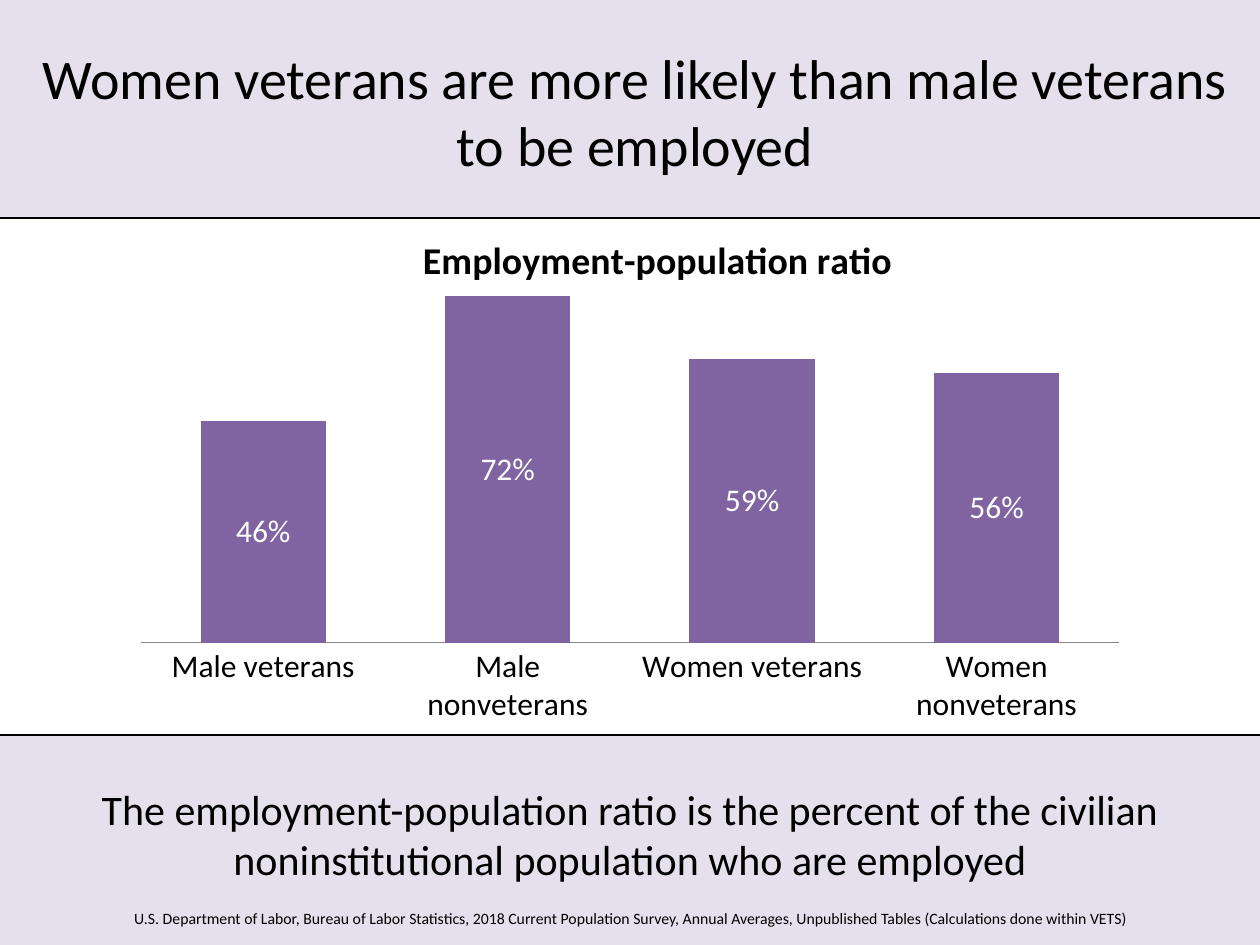
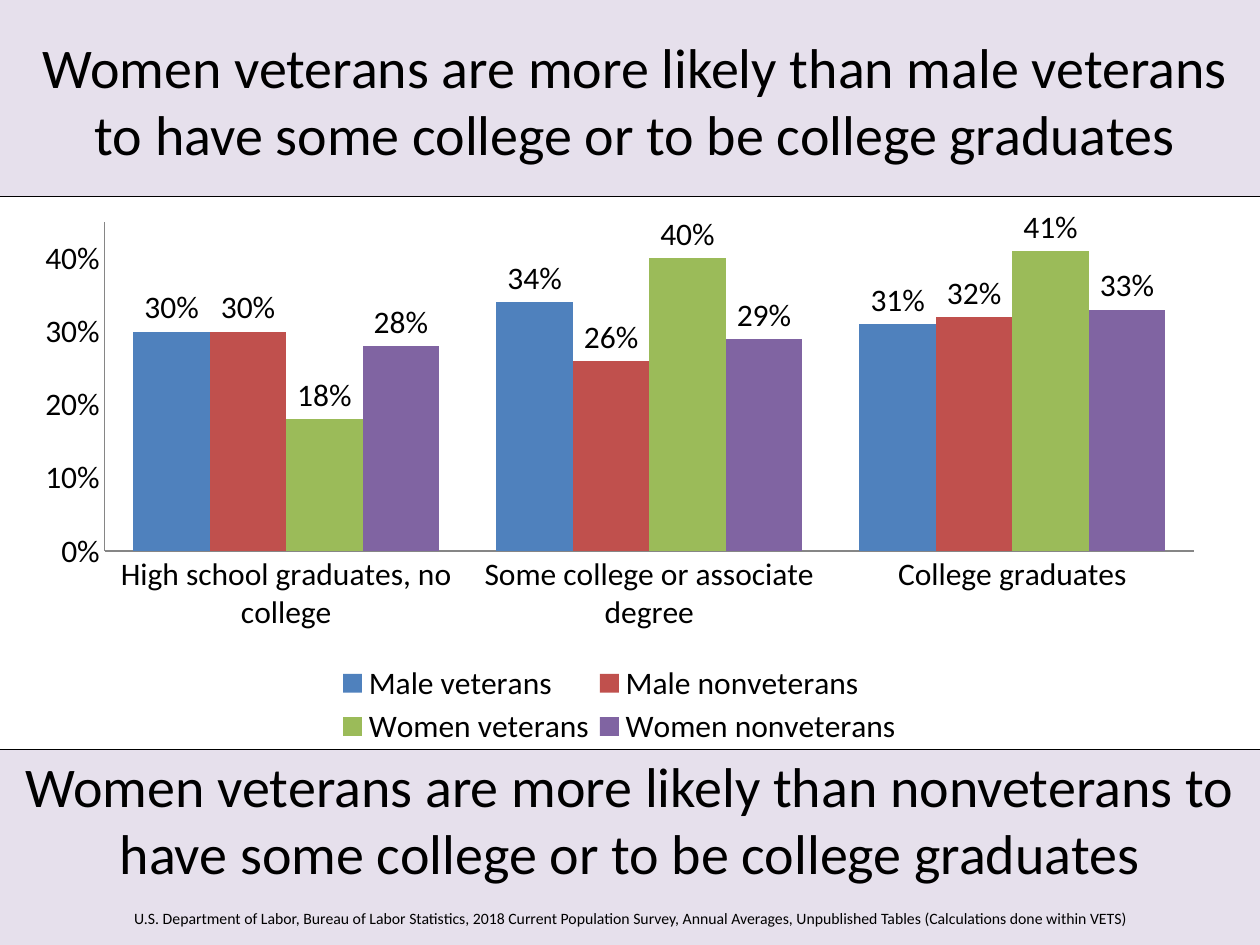
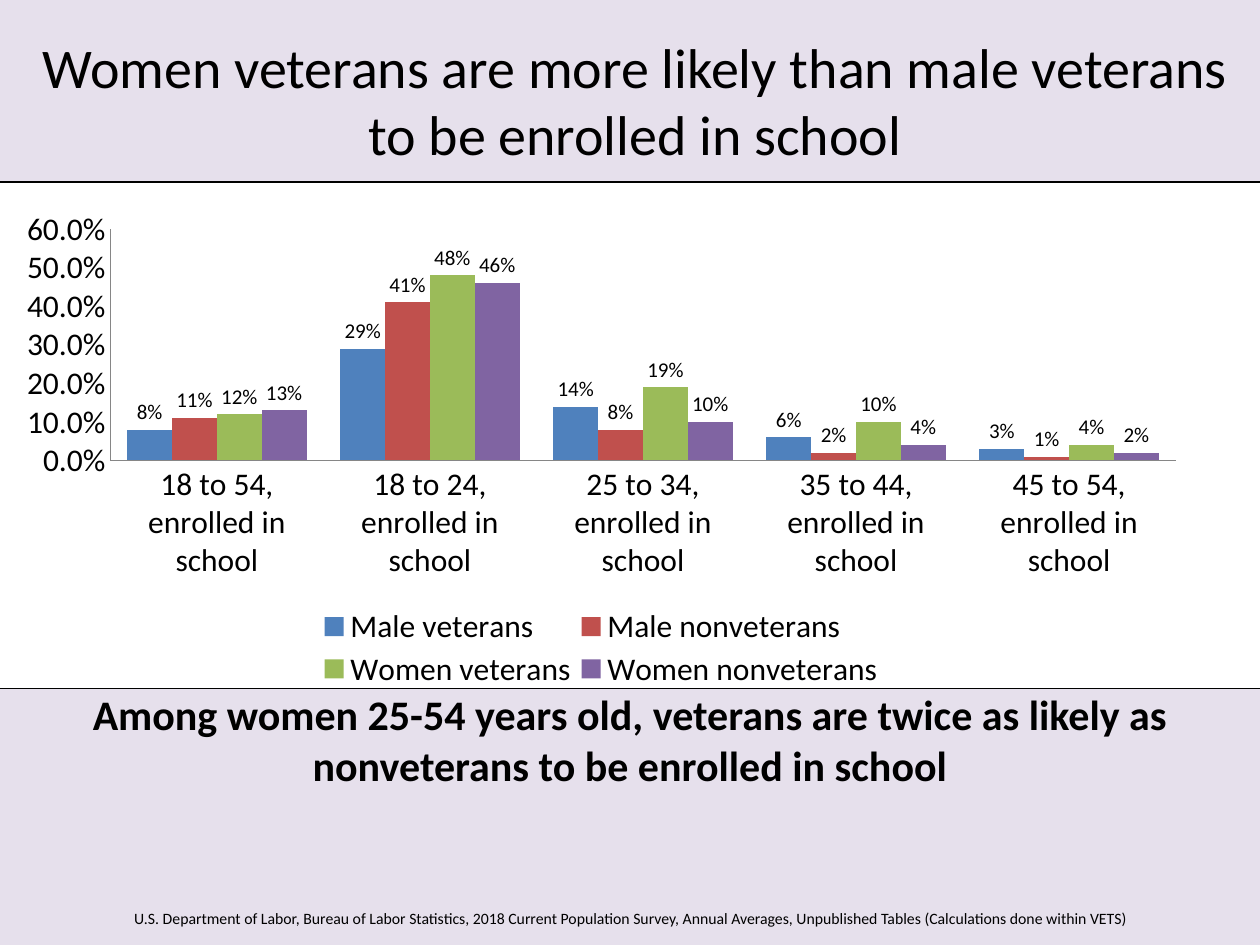
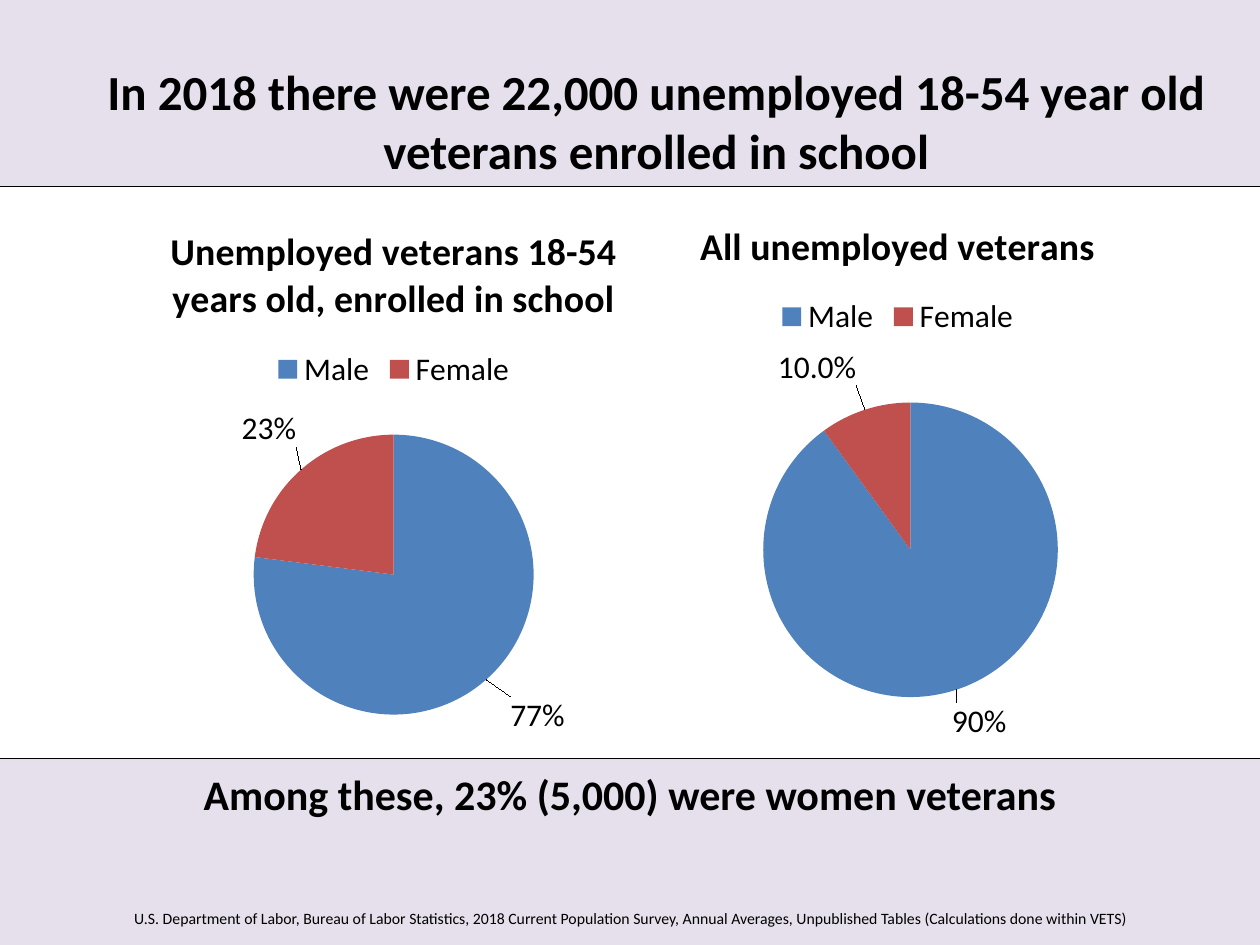
from lxml import etree
from pptx import Presentation
from pptx.chart.data import CategoryChartData as ChartData
from pptx.dml.color import RGBColor
from pptx.enum.chart import XL_CHART_TYPE as ChartType
from pptx.enum.chart import XL_LABEL_POSITION as LabelPos
from pptx.enum.chart import XL_LEGEND_POSITION as LegendPos
from pptx.enum.chart import XL_TICK_MARK as Tick
from pptx.enum.shapes import MSO_CONNECTOR as Connector
from pptx.enum.shapes import MSO_SHAPE as Shape
from pptx.enum.text import MSO_ANCHOR as Anchor
from pptx.enum.text import PP_ALIGN as Align
from pptx.oxml import parse_xml
from pptx.oxml.ns import nsdecls, qn
from pptx.util import Pt

BLACK = RGBColor(0x00, 0x00, 0x00)
WHITE = RGBColor(0xFF, 0xFF, 0xFF)
LAVENDER = RGBColor(0xE6, 0xE0, 0xEC)
AXIS_GRAY = RGBColor(0x86, 0x86, 0x86)
BLUE = RGBColor(0x4F, 0x81, 0xBD)
RED = RGBColor(0xC0, 0x50, 0x4D)
GREEN = RGBColor(0x9B, 0xBB, 0x59)
PURPLE = RGBColor(0x80, 0x64, 0xA2)
GROUP_COLORS = [BLUE, RED, GREEN, PURPLE]

FONT = "Calibri"
WIDTH, HEIGHT = 720, 540
CHART_SIZE, CHART_TITLE_SIZE = 18, 21.6
GROUPS = ["Male veterans", "Male nonveterans", "Women veterans", "Women nonveterans"]
SOURCE = ("U.S. Department of Labor, Bureau of Labor Statistics, 2018 Current Population Survey, "
          "Annual Averages, Unpublished Tables (Calculations done within VETS)")

SLIDES = [
    dict(
        title="Women veterans are more likely than male veterans to be employed",
        title_box=(6, 18), title_format=dict(size=Pt(32)),
        message="The employment-population ratio is the percent of the civilian "
                "noninstitutional population who are employed",
        message_top=444, message_format=dict(size=Pt(24)),
        bands=(124.5, 420),
        charts=[dict(
            kind=ChartType.COLUMN_STACKED, box=(69, 90, 582, 330),
            title="Employment-population ratio", title_at=(0.29, 0.12),
            categories=GROUPS,
            series={"Employment-population ratio": [0.46, 0.72, 0.59, 0.56]},
            colors=[PURPLE], gap=95, overlap=100, top=0.72, axis_format=None,
            label_position=LabelPos.CENTER,
            label_format=dict(size=Pt(18), color=WHITE),
            plot=(0.02, 0.24, 0.96, 0.6), legend=None)],
    ),
    dict(
        title="Women veterans are more likely than male veterans "
              "to have some college or to be college graduates",
        title_box=(6, 12), title_format=dict(size=Pt(32)),
        message="Women veterans are more likely than nonveterans to have some college "
                "or to be college graduates",
        message_top=426, message_format=dict(size=Pt(32)),
        bands=(112.5, 428.5),
        charts=[dict(
            kind=ChartType.COLUMN_CLUSTERED, box=(12, 119, 684, 310),
            categories=["High school graduates, no college",
                        "Some college or associate degree", "College graduates"],
            series=dict(zip(GROUPS, [[0.3, 0.34, 0.31], [0.3, 0.26, 0.32],
                                     [0.18, 0.4, 0.41], [0.28, 0.29, 0.33]])),
            colors=GROUP_COLORS, gap=75, overlap=0, top=0.45, axis_format="0%",
            label_position=LabelPos.OUTSIDE_END,
            label_format=dict(size=Pt(18), color=BLACK),
            plot=(0.07, 0.02, 0.91, 0.61), legend=(0.26, 0.83, 0.48, 0.17))],
    ),
    dict(
        title="Women veterans are more likely than male veterans to be enrolled in school",
        title_box=(6, 12), title_format=dict(size=Pt(32)),
        message="Among women 25-54 years old, veterans are twice as likely as "
                "nonveterans to be enrolled in school",
        message_top=390, message_format=dict(size=Pt(24), bold=True),
        bands=(104, 393.5),
        charts=[dict(
            kind=ChartType.COLUMN_CLUSTERED, box=(1.5, 114, 684, 281.5),
            categories=[f"{ages}, enrolled in school" for ages in
                        ("18 to 54", "18 to 24", "25 to 34", "35 to 44", "45 to 54")],
            series=dict(zip(GROUPS, [[0.08, 0.29, 0.14, 0.06, 0.03],
                                     [0.11, 0.41, 0.08, 0.02, 0.01],
                                     [0.12, 0.48, 0.19, 0.1, 0.04],
                                     [0.13, 0.46, 0.1, 0.04, 0.02]])),
            colors=GROUP_COLORS, gap=75, overlap=0, top=0.6, axis_format="0.0%",
            label_position=LabelPos.OUTSIDE_END,
            label_format=dict(size=Pt(12), color=BLACK),
            plot=(0.09, 0.06, 0.89, 0.47), legend=(0.26, 0.82, 0.48, 0.18))],
    ),
    dict(
        title="In 2018 there were 22,000 unemployed 18-54 year old veterans enrolled in school",
        title_box=(18, 24), title_format=dict(size=Pt(28), bold=True),
        message="Among these, 23% (5,000) were women veterans",
        message_top=435.5, message_format=dict(size=Pt(24), bold=True),
        bands=(106.5, 433.5),
        charts=[
            dict(kind=ChartType.PIE, box=(42, 114, 366, 320),
                 title="Unemployed veterans 18-54 years old, enrolled in school",
                 categories=["Male", "Female"],
                 series={"Unemployed veterans 18-54 years old, enrolled in school": [77, 23]},
                 colors=[BLUE, RED], plot=(0.28, 0.42, 0.44, 0.5),
                 labels=[("0%", 0.03, 0.02), ("0%", 0, -0.03)]),
            dict(kind=ChartType.PIE, box=(330, 111, 366, 320),
                 title="All unemployed veterans",
                 categories=["Male", "Female"],
                 series={"All unemployed veterans": [90, 10]},
                 colors=[BLUE, RED], plot=(0.29, 0.37, 0.46, 0.53),
                 labels=[("0%", -0.01, 0.01), ("0.0%", -0.01, -0.03)]),
        ],
    ),
]


def apply_font(font, formats):
    for name, value in dict(name=FONT, color=BLACK, **{}).items() | formats.items():
        if name != "color":
            setattr(font, name, value)
    font.color.rgb = formats.get("color", BLACK)


def add_text(slide, text, box, formats, anchor=Anchor.TOP):
    frame = slide.shapes.add_textbox(*map(Pt, box)).text_frame
    frame.word_wrap = True
    frame.vertical_anchor = anchor
    paragraph = frame.paragraphs[0]
    paragraph.alignment = Align.CENTER
    run = paragraph.add_run()
    run.text = text
    apply_font(run.font, formats)


def add_band(slide, top, height):
    band = slide.shapes.add_shape(Shape.RECTANGLE, 0, Pt(top), Pt(WIDTH), Pt(height))
    band.shadow.inherit = False
    band.fill.solid()
    band.fill.fore_color.rgb = LAVENDER
    band.line.fill.background()


def add_rule(slide, y):
    rule = slide.shapes.add_connector(Connector.STRAIGHT, 0, Pt(y), Pt(WIDTH), Pt(y))
    rule.line.color.rgb = BLACK
    rule.line.width = Pt(0.75)
    etree.SubElement(rule._element.spPr, qn("a:effectLst"))


def place(part, after, place_at, inner=False):
    for old in part.findall(qn("c:layout")):
        part.remove(old)
    target = '<c:layoutTarget val="inner"/>' if inner else ""
    modes = '<c:xMode val="edge"/><c:yMode val="edge"/>'
    sizes = "".join(f'<c:{key} val="{value}"/>' for key, value in zip("xywh", place_at))
    layout = parse_xml(f'<c:layout {nsdecls("c")}><c:manualLayout>{target}{modes}{sizes}'
                       "</c:manualLayout></c:layout>")
    part.insert(part.index(part.find(qn(after))) + 1 if after else 0, layout)


def style_columns(chart, content):
    plot = chart.plots[0]
    plot.gap_width, plot.overlap = content["gap"], content["overlap"]
    values, groups = chart.value_axis, chart.category_axis
    values.minimum_scale, values.maximum_scale = 0, content["top"]
    values.major_unit = 0.1
    values.has_major_gridlines = False
    for axis in (values, groups):
        axis.major_tick_mark = Tick.NONE
        axis.format.line.color.rgb = AXIS_GRAY
    if content["axis_format"]:
        values.tick_labels.number_format = content["axis_format"]
        values.tick_labels.number_format_is_linked = False
    else:
        values.visible = False
    for series, color in zip(plot.series, content["colors"]):
        series.invert_if_negative = False
        series.format.fill.solid()
        series.format.fill.fore_color.rgb = color
        labels = series.data_labels
        for name, value in dict(show_value=True, number_format="0%",
                                number_format_is_linked=False,
                                position=content["label_position"]).items():
            setattr(labels, name, value)
        apply_font(labels.font, content["label_format"])


def style_pie(chart, content):
    series = chart.plots[0].series[0]
    labels = series.data_labels
    for name, value in dict(show_percentage=True, show_value=False, number_format="0%",
                            number_format_is_linked=False,
                            position=LabelPos.OUTSIDE_END).items():
        setattr(labels, name, value)
    flags = "".join(f'<c:show{flag} val="{int(flag == "Percent")}"/>' for flag in
                    ("LegendKey", "Val", "CatName", "SerName", "Percent", "BubbleSize"))
    for index, (color, (number_format, dx, dy)) in enumerate(
            zip(content["colors"], content["labels"])):
        fill = series.points[index].format.fill
        fill.solid()
        fill.fore_color.rgb = color
        labels._element.insert(index, parse_xml(
            f'<c:dLbl {nsdecls("c")}><c:idx val="{index}"/><c:layout><c:manualLayout>'
            f'<c:x val="{dx}"/><c:y val="{dy}"/></c:manualLayout></c:layout>'
            f'<c:numFmt formatCode="{number_format}" sourceLinked="0"/>'
            f'<c:dLblPos val="outEnd"/>{flags}</c:dLbl>'))


def add_chart(slide, content):
    data = ChartData(number_format="General" if content["kind"] == ChartType.PIE else "0%")
    data.categories = content["categories"]
    for name, values in content["series"].items():
        data.add_series(name, values)
    chart = slide.shapes.add_chart(content["kind"], *map(Pt, content["box"]), data).chart
    apply_font(chart.font, dict(size=Pt(CHART_SIZE)))
    is_pie = content["kind"] == ChartType.PIE
    chart.plots[0].vary_by_categories = is_pie

    chart.has_title = "title" in content
    if chart.has_title:
        frame = chart.chart_title.text_frame
        frame.text = content["title"]
        apply_font(frame.paragraphs[0].runs[0].font, dict(size=Pt(CHART_TITLE_SIZE), bold=True))
        if "title_at" in content:
            place(chart.chart_title._element, "c:tx", content["title_at"])

    legend_at = content.get("legend")
    chart.has_legend = is_pie or bool(legend_at)
    if chart.has_legend:
        chart.legend.position = LegendPos.TOP if is_pie else LegendPos.BOTTOM
        chart.legend.include_in_layout = False
        if legend_at:
            place(chart.legend._element, "c:legendPos", legend_at)

    (style_pie if is_pie else style_columns)(chart, content)
    place(chart._chartSpace.chart.plotArea, None, content["plot"], inner=True)


def build_slide(deck, content):
    slide = deck.slides.add_slide(deck.slide_layouts[6])
    header_bottom, footer_top = content["bands"]
    add_band(slide, 0, header_bottom)
    add_band(slide, footer_top, HEIGHT - footer_top)
    add_text(slide, content["title"], (*content["title_box"], 714, 90),
             content["title_format"], Anchor.MIDDLE)
    add_text(slide, content["message"], (0, content["message_top"], WIDTH, 60),
             content["message_format"])
    for y in content["bands"]:
        add_rule(slide, y)
    for chart in content["charts"]:
        add_chart(slide, chart)
    add_text(slide, SOURCE, (0, 515.5, WIDTH, 18), dict(size=Pt(9)))


def main():
    deck = Presentation()
    deck.slide_width, deck.slide_height = Pt(WIDTH), Pt(HEIGHT)
    for content in SLIDES:
        build_slide(deck, content)
    deck.save("out.pptx")


if __name__ == "__main__":
    main()
